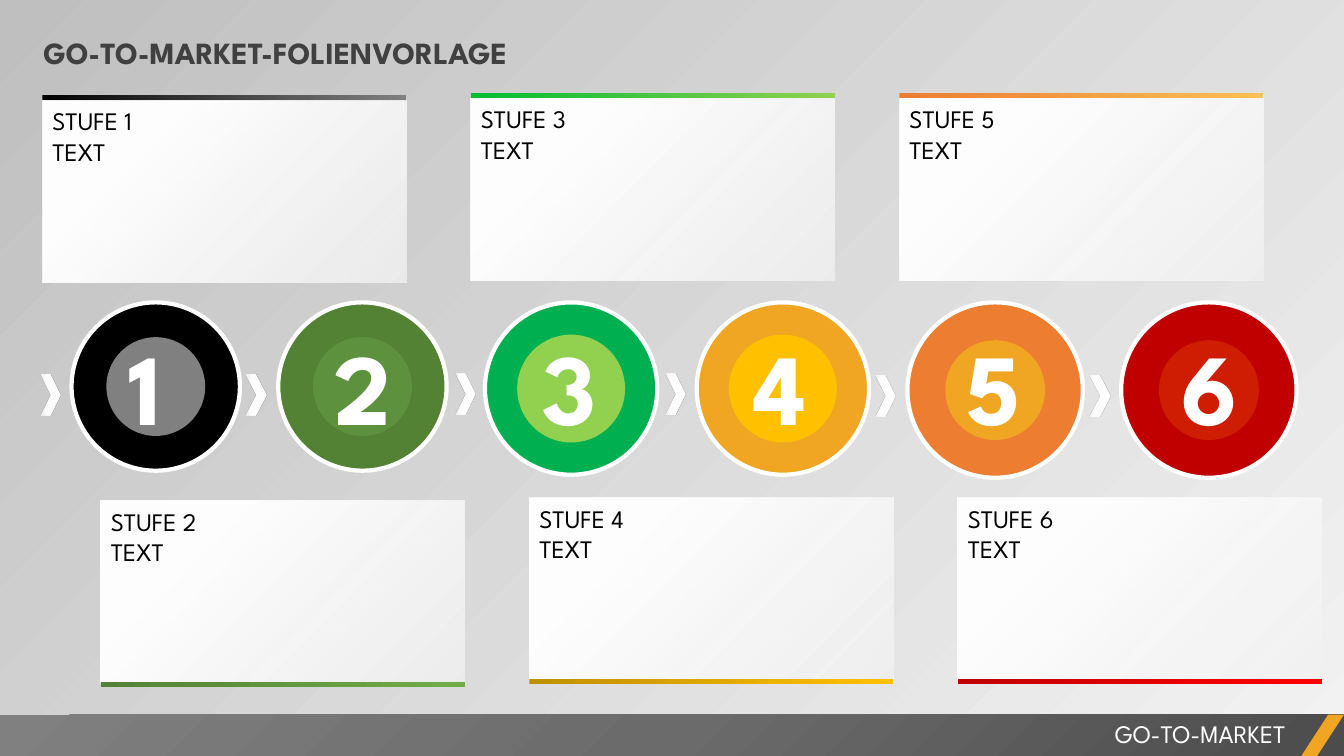
"""Build the go-to-market slide with six numbered stages."""
from pptx import Presentation
from pptx.dml.color import RGBColor
from pptx.enum.shapes import MSO_SHAPE
from pptx.enum.text import MSO_ANCHOR, PP_ALIGN
from pptx.oxml import parse_xml
from pptx.oxml.ns import nsdecls, qn
from pptx.util import Inches, Pt

OVAL, CHEVRON = MSO_SHAPE.OVAL, MSO_SHAPE.CHEVRON
ROUND, RECT = MSO_SHAPE.ROUNDED_RECTANGLE, MSO_SHAPE.RECTANGLE
SLANT = MSO_SHAPE.PARALLELOGRAM
TOP, LEFT, RIGHT = MSO_ANCHOR.TOP, PP_ALIGN.LEFT, PP_ALIGN.RIGHT

BLACK = RGBColor(0x00, 0x00, 0x00)
WHITE = RGBColor(0xFF, 0xFF, 0xFF)
INK = RGBColor(0x40, 0x40, 0x40)
COAL = RGBColor(0x4C, 0x4C, 0x4C)
SLATE = RGBColor(0x6B, 0x6B, 0x6B)
GREY = RGBColor(0x80, 0x80, 0x80)
SILVER = RGBColor(0xBF, 0xBF, 0xBF)
PALE = RGBColor(0xF2, 0xF2, 0xF2)
MOSS = RGBColor(0x54, 0x82, 0x35)
FERN = RGBColor(0x5E, 0x91, 0x3E)
LEAF = RGBColor(0x70, 0xAD, 0x47)
GREEN = RGBColor(0x00, 0xB0, 0x50)
MINT = RGBColor(0x00, 0xBD, 0x32)
LIME = RGBColor(0x92, 0xD0, 0x50)
AMBER = RGBColor(0xF0, 0xA6, 0x22)
GOLD = RGBColor(0xFF, 0xC0, 0x00)
BRONZE = RGBColor(0xBF, 0x90, 0x00)
ORANGE = RGBColor(0xED, 0x7D, 0x31)
PEACH = RGBColor(0xF9, 0xC0, 0x53)
WINE = RGBColor(0xC0, 0x00, 0x00)
RUST = RGBColor(0xCE, 0x1D, 0x02)
RED = RGBColor(0xFF, 0x00, 0x00)

FLAT = '<a:lin ang="0" scaled="0"/>'
SLOPE = '<a:lin ang="13500000" scaled="0"/>'
GLOW = '<a:path path="circle"><a:fillToRect l="100000" t="100000"/></a:path>'
PAPER = [(0, PALE, 80), (74, WHITE, 100)]
FADE = [(0, WHITE, 62), (31, WHITE, 100)]


def shade(fill, root, stops, course):
    fill.background()
    marks = "".join(
        f'<a:gs pos="{spot * 1000}"><a:srgbClr val="{tint}">'
        f'<a:alpha val="{alpha * 1000}"/></a:srgbClr></a:gs>'
        for spot, tint, alpha in stops)
    blank = next(root.iter(qn("a:noFill")))
    blank.getparent().replace(blank, parse_xml(
        f'<a:gradFill {nsdecls("a")} rotWithShape="1">'
        f'<a:gsLst>{marks}</a:gsLst>{course}</a:gradFill>'))


def write(frame, lines, size, tint, bold=False, align=LEFT):
    frame.word_wrap = True
    frame.vertical_anchor = TOP
    look = {"name": "League Spartan", "size": Pt(size), "bold": bold}
    for row, line in enumerate(lines):
        para = frame.add_paragraph() if row else frame.paragraphs[0]
        para.alignment = align
        run = para.add_run()
        run.text = line
        for key, value in look.items():
            setattr(run.font, key, value)
        run.font.color.rgb = tint


deck = Presentation()
deck.slide_width, deck.slide_height = Inches(13.33), Inches(7.5)
slide = deck.slides.add_slide(deck.slide_layouts[5])
shapes = slide.shapes
shade(slide.background.fill, slide.element,
      [(0, PALE, 40), (100, SILVER, 100)], SLOPE)

title = shapes.title
place = {"left": 0.33, "top": 0.28, "width": 8.61, "height": 0.47}
for key, value in place.items():
    setattr(title, key, Inches(value))
write(title.text_frame, ["GO-TO-MARKET-FOLIENVORLAGE"], 22, INK, True)

parts = [
    (RECT, (0, 7.09, 13.33, 0.42),
     [(0, COAL, 100), (50, SLATE, 100), (100, GREY, 100)], GLOW, []),
    (SLANT, (12.9, 7.09, 0.43, 0.42), AMBER, None, []),
]
labels = [((5.25, 7.08, 7.6, 0.4), "GO-TO-MARKET", 18, False, RIGHT)]

# ring x, ring size, core size, chevron x, chevron y, digit x, card y, colours
stages = [
    (0.71, 1.67, 0.98, 0.4, 3.72, 1.18, 1, BLACK, GREY, BLACK, GREY),
    (2.76, 1.67, 0.98, 2.44, 3.72, 3.22, 4.97, MOSS, FERN, MOSS, LEAF),
    (4.81, 1.71, 1.07, 4.52, 3.71, 5.28, 0.98, GREEN, LIME, MINT, LIME),
    (6.91, 1.71, 1.07, 6.6, 3.71, 7.37, 4.94, AMBER, GOLD, BRONZE, GOLD),
    (9, 1.74, 0.99, 8.68, 3.73, 9.49, 0.98, ORANGE, AMBER, ORANGE, PEACH),
    (11.12, 1.74, 0.99, 10.81, 3.73, 11.62, 4.94, WINE, RUST, WINE, RED),
]
for index, (ring, size, core, tip, level, digit, card,
            outer, inner, start, end) in enumerate(stages):
    number = str(index + 1)
    pair, low = divmod(index, 2)
    left = 0.42 + 4.25 * pair + 0.58 * low
    edge = card + (1.8 if low else -0.06)
    gap = (size - core) / 2
    parts += [
        (OVAL, (ring, 3, size, size), outer, None, []),
        (OVAL, (ring + gap, 3 + gap, core, core), inner, None, []),
        (CHEVRON, (tip, level, 0.2, 0.4), FADE, FLAT, []),
        (ROUND, (left, card, 3.61, 1.8), PAPER, SLOPE,
         [f"STUFE {number}", "TEXT"]),
        (ROUND, (left, edge, 3.61, 0.05),
         [(0, start, 100), (100, end, 100)], FLAT, []),
    ]
    labels.append(((digit, 3.17, 0.92 if index else 0.72, 1.31),
                   number, 72, True, LEFT))

rims = [stage[7] for stage in stages]
for kind, box, paint, course, lines in parts:
    shape = shapes.add_shape(kind, *map(Inches, box))
    shape.shadow.inherit = False
    if course:
        shade(shape.fill, shape.element, paint, course)
    else:
        shape.fill.solid()
        shape.fill.fore_color.rgb = paint
    if kind == OVAL and box[1] == 3:
        shape.line.color.rgb = WHITE
        shape.line.width = Pt(3)
    else:
        shape.line.fill.background()
    if kind in (ROUND, SLANT):
        shape.adjustments[0] = 0.65 if kind == SLANT else 0
    if lines:
        write(shape.text_frame, lines, 18, BLACK)

for box, text, size, bold, align in labels:
    label = shapes.add_textbox(*map(Inches, box))
    write(label.text_frame, [text], size, WHITE, bold, align)

deck.save("out.pptx")
